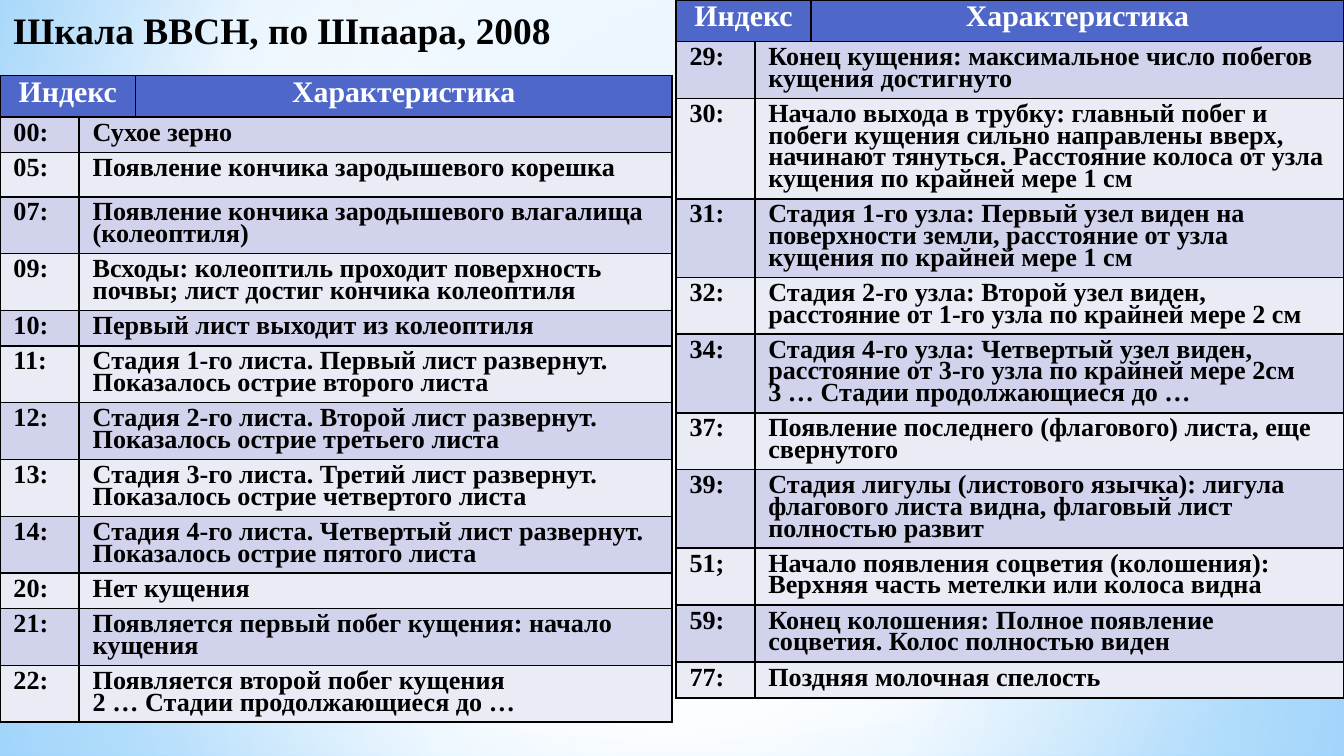
import pptx
import pptx.util
import pptx.oxml
import pptx.dml.color
import pptx.enum.shapes
import pptx.enum.text
from dataclasses import dataclass

Pt = pptx.util.Pt
RGB = pptx.dml.color.RGBColor.from_string
ALIGN = pptx.enum.text.PP_ALIGN
SHAPE = pptx.enum.shapes.MSO_SHAPE
NS = 'xmlns:a="http://schemas.openxmlformats.org/drawingml/2006/main"'


@dataclass(frozen=True)
class Theme:
    """Colours, font and type sizes of the slide."""
    font: str = "Times New Roman"
    ink: str = "000000"
    white: str = "FFFFFF"
    header: str = "4E67C8"
    bands: tuple = ("D0D3EB", "E9EBF5")
    sky: str = "B4DCFA"
    sky_edge: str = "9ED5FF"
    sky_deep: str = "5BB9FF"
    title_size: int = 20
    header_size: int = 16
    body_size: int = 14


T = Theme()
COLUMN_SHARES = (0.118, 0.084, 0.798)
HEADINGS = ("Индекс", "Характеристика")
EARLY_STAGES = [
    ("00:", "Сухое зерно"),
    ("05:", "Появление кончика зародышевого корешка"),
    ("07:", "Появление кончика зародышевого влагалища (колеоптиля)"),
    ("09:", "Всходы: колеоптиль проходит поверхность почвы; лист достиг кончика колеоптиля"),
    ("10:", "Первый лист выходит из колеоптиля"),
    ("11:", "Стадия 1-го листа. Первый лист развернут. Показалось острие второго листа"),
    ("12:", "Стадия 2-го листа. Второй лист развернут. Показалось острие третьего листа"),
    ("13:", "Стадия 3-го листа. Третий лист развернут. Показалось острие четвертого листа"),
    ("14:", "Стадия 4-го листа. Четвертый лист развернут. Показалось острие пятого листа"),
    ("20:", "Нет кущения"),
    ("21:", "Появляется первый побег кущения: начало кущения"),
    ("22:", "Появляется второй побег кущения\n2 … Стадии продолжающиеся до …"),
]
EARLY_HEIGHTS = [22.3, 12.2, 23.8, 29.5, 29.5, 15.1, 28.1, 25.9, 28.1, 28.1, 17.3, 25.9, 18]
LATE_STAGES = [
    ("29:", "Конец кущения: максимальное число побегов кущения достигнуто"),
    ("30:", "Начало выхода в трубку: главный побег и побеги кущения сильно направлены вверх, "
            "начинают тянуться. Расстояние колоса от узла кущения по крайней мере 1 см"),
    ("31:", "Стадия 1-го узла: Первый узел виден на поверхности земли, "
            "расстояние от узла кущения по крайней мере 1 см"),
    ("32:", "Стадия 2-го узла: Второй узел виден, расстояние от 1-го узла по крайней мере 2 см"),
    ("34:", "Стадия 4-го узла: Четвертый узел виден, расстояние от 3-го узла по крайней мере 2см\n"
            "3 … Стадии продолжающиеся до …"),
    ("37:", "Появление последнего (флагового) листа, еще свернутого"),
    ("39:", "Стадия лигулы (листового язычка): лигула флагового листа видна, "
            "флаговый лист полностью развит"),
    ("51;", "Начало появления соцветия (колошения): Верхняя часть метелки или колоса видна"),
    ("59:", "Конец колошения: Полное появление соцветия. Колос полностью виден"),
    ("77:", "Поздняя молочная спелость"),
]
LATE_HEIGHTS = [22.3] + [19.4] * len(LATE_STAGES)


def write(tf, text, size=T.body_size, color=T.ink, align=ALIGN.LEFT, spacing=None):
    """Write bold text, one paragraph per line."""
    for i, line in enumerate(text.split("\n")):
        p = tf.add_paragraph() if i else tf.paragraphs[0]
        p.alignment = align
        if spacing:
            p.line_spacing = spacing
        r = p.add_run()
        r.text = line
        r.font.name, r.font.size, r.font.bold = T.font, Pt(size), True
        r.font.color.rgb = RGB(color)


def fill_gradient(fill, element, parent, stops, center=None):
    """Give a fill a gradient, radial about center or else vertical."""
    fill.solid()
    marks = "".join(
        f'<a:gs pos="{pos * 1000}"><a:srgbClr val="{color}"><a:alpha val="{alpha * 1000}"/>'
        f'</a:srgbClr></a:gs>' for pos, color, alpha in stops)
    if center:
        sides = " ".join(f'{k}="{v * 1000}"' for k, v in zip("ltrb", center))
        shade = f'<a:path path="circle"><a:fillToRect {sides}/></a:path>'
    else:
        shade = '<a:lin ang="5400000" scaled="0"/>'
    solid = element.xpath(f"{parent}/a:solidFill")[0]
    solid.getparent().replace(solid, pptx.oxml.parse_xml(
        f'<a:gradFill {NS} rotWithShape="1"><a:gsLst>{marks}</a:gsLst>{shade}</a:gradFill>'))


def add_backdrop(s, width, height):
    """Paint the sky background and its translucent layers."""
    fill_gradient(s.background.fill, s.element, "p:cSld/p:bg/p:bgPr",
                  [(0, T.sky_edge, 100), (60, T.white, 100), (100, T.sky_deep, 100)],
                  (20, 10, 20, 60))
    middle = (50, 50, 50, 50)
    horizon = 301.5
    layers = [
        (SHAPE.RECTANGLE, horizon, height - horizon, middle,
         [(0, T.white, 91), (37, T.white, 76), (100, T.sky, 79)]),
        (SHAPE.RECTANGLE, 0, horizon, middle,
         [(0, T.white, 89), (48, T.white, 62), (100, T.sky, 79)]),
        (SHAPE.RECTANGLE, 222.5, 135, None,
         [(0, T.white, 0), (29, T.white, 30), (45, T.sky, 40),
          (55, T.white, 26), (65, T.sky, 60), (100, T.white, 0)]),
        (SHAPE.OVAL, 94.5, horizon, middle, [(0, T.white, 100), (56, T.white, 0)]),
    ]
    for kind, top, depth, center, stops in layers:
        sp = s.shapes.add_shape(kind, 0, Pt(top), Pt(width), Pt(depth))
        sp.shadow.inherit = False
        sp.line.fill.background()
        fill_gradient(sp.fill, sp.element, "p:spPr", stops, center)


def format_cell(cell, color):
    """Fill a cell and rule its four sides."""
    cell.fill.solid()
    cell.fill.fore_color.rgb = RGB(color)
    tcPr = cell._tc.get_or_add_tcPr()
    for i, side in enumerate("LRTB"):
        tcPr.insert(i, pptx.oxml.parse_xml(
            f'<a:ln{side} {NS} w="12700"><a:solidFill><a:srgbClr val="{T.ink}"/>'
            f'</a:solidFill></a:ln{side}>'))


def add_stage_table(s, left, top, width, height, stages, heights):
    """Place a table of growth stages in the given box."""
    frame = s.shapes.add_table(len(heights), len(COLUMN_SHARES),
                               Pt(left), Pt(top), Pt(width), Pt(height))
    table = frame.table
    for column, share in zip(table.columns, COLUMN_SHARES):
        column.width = Pt(width * share)
    for i, (texts, row_height) in enumerate(zip([HEADINGS] + stages, heights)):
        table.rows[i].height = Pt(row_height)
        cells = [table.cell(i, j) for j in range(len(COLUMN_SHARES))]
        for cell in cells:
            format_cell(cell, T.bands[(i - 1) % 2] if i else T.header)
        if i:
            cells[1].merge(cells[2])
            style, second = {}, cells[1]
        else:
            cells[0].merge(cells[1])
            style = dict(size=T.header_size, color=T.white, align=ALIGN.CENTER)
            second = cells[2]
        for cell, text in zip((cells[0], second), texts):
            write(cell.text_frame, text, spacing=0.75, **style)
    frame.height = Pt(height)


def add_title(s, left, top, width, height):
    """Place the slide title in front of the backdrop."""
    sp = s.shapes.title
    sp.left, sp.top, sp.width, sp.height = Pt(left), Pt(top), Pt(width), Pt(height)
    tf = sp.text_frame
    tf.word_wrap = True
    tf.auto_size = pptx.enum.text.MSO_AUTO_SIZE.SHAPE_TO_FIT_TEXT
    tf.vertical_anchor = pptx.enum.text.MSO_ANCHOR.TOP
    write(tf, "Шкала ВВСН, по Шпаара, 2008", size=T.title_size)
    sp.element.getparent().append(sp.element)


def main():
    """Build the slide and save it."""
    prs = pptx.Presentation()
    width, height = 720, 405
    prs.slide_width, prs.slide_height = Pt(width), Pt(height)
    s = prs.slides.add_slide(prs.slide_layouts[5])
    add_backdrop(s, width, height)
    add_stage_table(s, 0, 40.5, 360, 364.5, EARLY_STAGES, EARLY_HEIGHTS)
    add_stage_table(s, 362.2, 0, 357.8, 396.7, LATE_STAGES, LATE_HEIGHTS)
    add_title(s, 0, 0, 355.7, 31.5)
    prs.save("out.pptx")


if __name__ == "__main__":
    main()
